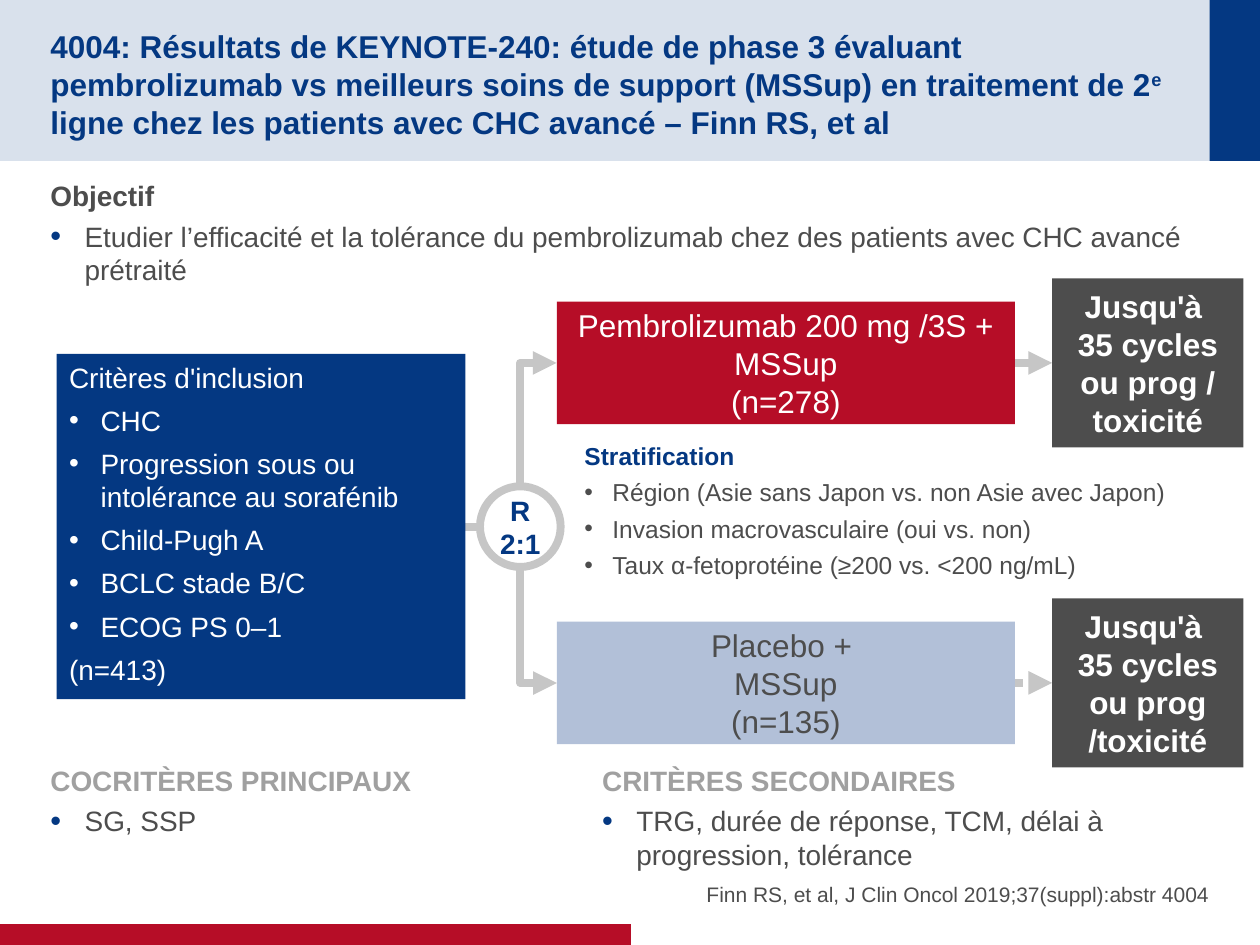
from pptx import Presentation
from pptx.util import Pt
from pptx.dml.color import RGBColor
from pptx.enum.shapes import MSO_SHAPE as SHAPE, MSO_CONNECTOR as CONN
from pptx.enum.text import PP_ALIGN as AL, MSO_ANCHOR as ANC, MSO_AUTO_SIZE as AUTO
from pptx.enum.dml import MSO_LINE
from pptx.oxml import parse_xml
from pptx.oxml.ns import nsdecls, qn

NAVY, RED, DARK, GREY, LINE, WHITE = "043882", "B60D27", "4D4D4D", "A0A0A0", "C6C6C6", "FFFFFF"
rgb = RGBColor.from_string


def write(sp, paras, size=16, color=DARK, bold=False, align=AL.LEFT, anchor=ANC.TOP,
          ins=(7.2, 3.6, 7.2, 3.6), after=0, wrap=True, indent=19.6, bullet=None):
    """Fill a shape with paragraphs; a leading bullet sign makes a list item."""
    tf = sp.text_frame
    tf.auto_size, tf.word_wrap, tf.vertical_anchor = AUTO.NONE, wrap, anchor
    tf.margin_left, tf.margin_top, tf.margin_right, tf.margin_bottom = map(Pt, ins)
    for i, text in enumerate(paras):
        p = tf.paragraphs[0] if i == 0 else tf.add_paragraph()
        item = text.startswith("•")
        p.text = text.lstrip("•")
        p.alignment, p.space_after = align, Pt(after)
        if item:
            pPr = p._p.get_or_add_pPr()
            pPr.set("marL", str(Pt(indent)))
            pPr.set("indent", str(-Pt(indent)))
            if bullet:
                pPr.append(parse_xml(f'<a:buClr {nsdecls("a")}><a:srgbClr val="{bullet}"/></a:buClr>'))
                pPr.append(parse_xml(f'<a:buSzPct {nsdecls("a")} val="110000"/>'))
            pPr.append(parse_xml(f'<a:buFont {nsdecls("a")} typeface="Arial"/>'))
            pPr.append(parse_xml(f'<a:buChar {nsdecls("a")} char="•"/>'))
        for r in p.runs:
            r.font.name, r.font.size = "Arial", Pt(size)
            r.font.bold = bold and not item
            r.font.color.rgb = rgb(DARK if item and color != WHITE else color)


def add_box(x, y, w, h, fill=None, kind=SHAPE.RECTANGLE):
    sp = s.shapes.add_shape(kind, Pt(x), Pt(y), Pt(w), Pt(h))
    sp.shadow.inherit = False
    sp.line.fill.background()
    if fill:
        sp.fill.solid()
        sp.fill.fore_color.rgb = rgb(fill)
    else:
        sp.fill.background()
    return sp


prs = Presentation()
prs.slide_width, prs.slide_height = Pt(720), Pt(540)
s = prs.slides.add_slide(prs.slide_layouts[5])
title = s.shapes.title

# Header band and footer bar, behind the title
for x, y, w, h, fill in [(0, 0, 720, 92, "D9E1EC"), (691.2, 0, 28.8, 92, NAVY),
                         (0, 528, 360.6, 12, RED)]:
    title._element.addprevious(add_box(x, y, w, h, fill)._element)

# Title with a raised letter
title.left, title.top, title.width, title.height = Pt(28.8), Pt(14.4), Pt(648.7), Pt(63.4)
write(title, ["4004: Résultats de KEYNOTE-240: étude de phase 3 évaluant pembrolizumab vs "
              "meilleurs soins de support (MSSup) en traitement de 2"],
      size=18, color=NAVY, bold=True, anchor=ANC.MIDDLE, ins=(0, 3.6, 0, 0))
p = title.text_frame.paragraphs[0]
for text, base in [("e", "30000"), (" ligne chez les patients avec CHC avancé – Finn RS, et al", "0")]:
    r = p.add_run()
    r.text = text
    r.font.name, r.font.size, r.font.bold = "Arial", Pt(18), True
    r.font.color.rgb = rgb(NAVY)
    r._r.get_or_add_rPr().set("baseline", base)

# Text blocks
flush = (0, 3.6, 0, 3.6)
text_blocks = [
    ((28.8, 98.6, 662.4, 72),
     ["Objectif", "•Etudier l’efficacité et la tolérance du pembrolizumab chez des patients "
      "avec CHC avancé prétraité"],
     dict(bold=True, ins=flush, bullet=NAVY)),
    ((28.8, 432.7, 325.4, 72), ["COCRITÈRES PRINCIPAUX", "•SG, SSP"],
     dict(color=GREY, bold=True, ins=flush, bullet=NAVY)),
    ((337, 432.7, 354.2, 77.8),
     ["CRITÈRES SECONDAIRES", "•TRG, durée de réponse, TCM, délai à progression, tolérance"],
     dict(color=GREY, bold=True, bullet=NAVY)),
    ((326.9, 248.4, 373, 96.5),
     ["Stratification", "•Région (Asie sans Japon vs. non Asie avec Japon)",
      "•Invasion macrovasculaire (oui vs. non)", "•Taux α-fetoprotéine (≥200 vs. <200 ng/mL)"],
     dict(size=14, color=NAVY, bold=True, indent=16)),
    ((365.8, 480.2, 325.4, 38.2), ["Finn RS, et al, J Clin Oncol 2019;37(suppl):abstr 4004"],
     dict(size=12, align=AL.RIGHT, anchor=ANC.BOTTOM, ins=(0, 0, 0, 0))),
]
for area, paras, fmt in text_blocks:
    write(s.shapes.add_textbox(*map(Pt, area)), paras, after=4, **fmt)

# Connectors: kind, from, to, rotation, arrowhead, dotted
UPPER, LOWER, MID = 207.4, 390.2, 301
connectors = [
    (CONN.STRAIGHT, (265.7, MID), (274.3, MID), 0, False, False),
    (CONN.STRAIGHT, (580.2, UPPER), (601.2, UPPER), 0, True, False),
    (CONN.STRAIGHT, (580, LOWER), (601.2, LOWER), 0, True, True),
    (CONN.ELBOW, (342.8, 253.1), (272.3, 232.2), 90, True, False),
    (CONN.ELBOW, (340.9, 346.7), (274.5, 367.6), 270, True, False),
]
for kind, start, end, rot, arrow, dotted in connectors:
    c = s.shapes.add_connector(kind, *map(Pt, start + end))
    c.line.color.rgb, c.line.width = rgb(LINE), Pt(4.5)
    if dotted:
        c.line.dash_style = MSO_LINE.ROUND_DOT
    spPr = c._element.spPr
    if rot:
        spPr.find(qn("a:xfrm")).set("rot", str(rot * 60000))
        spPr.find(qn("a:prstGeom")).set("prst", "bentConnector2")
    if arrow:
        spPr.find(qn("a:ln")).append(parse_xml(f'<a:tailEnd {nsdecls("a")} type="triangle"/>'))
    spPr.append(parse_xml(f'<a:effectLst {nsdecls("a")}/>'))

# Randomisation circle
circle = add_box(274.3, 277.9, 46.1, 46.1, kind=SHAPE.OVAL)
circle.line.color.rgb, circle.line.width = rgb(LINE), Pt(4.5)
write(circle, ["R", "2:1"], color=NAVY, bold=True, align=AL.CENTER, anchor=ANC.MIDDLE, wrap=False)

# Inclusion criteria
write(add_box(32.4, 202.3, 233.6, 197.3, NAVY),
      ["Critères d'inclusion", "•CHC", "•Progression sous ou intolérance au sorafénib",
       "•Child-Pugh A ", "•BCLC stade B/C", "•ECOG PS 0–1", "(n=413)"],
      color=WHITE, after=5.4, indent=18)

# Treatment arms, each with its duration box
arms = [
    (UPPER, "Pembrolizumab 200 mg /3S + MSSup\v(n=278)", RED, WHITE,
     "Jusqu'à \v35 cycles ou prog / toxicité"),
    (LOWER, "Placebo + \vMSSup\v(n=135)", "B2C0D8", DARK,
     "Jusqu'à \v35 cycles ou prog /toxicité"),
]
for y, arm, fill, color, duration in arms:
    fmt = dict(size=18, align=AL.CENTER, anchor=ANC.MIDDLE, ins=(7.2, 0, 7.2, 0))
    write(add_box(318.2, y - 35, 261.8, 70, fill), [arm], color=color, **fmt)
    write(add_box(601.2, y - 48.3, 109.4, 96.6, DARK), [duration], color=WHITE, bold=True, **fmt)

prs.save("out.pptx")
